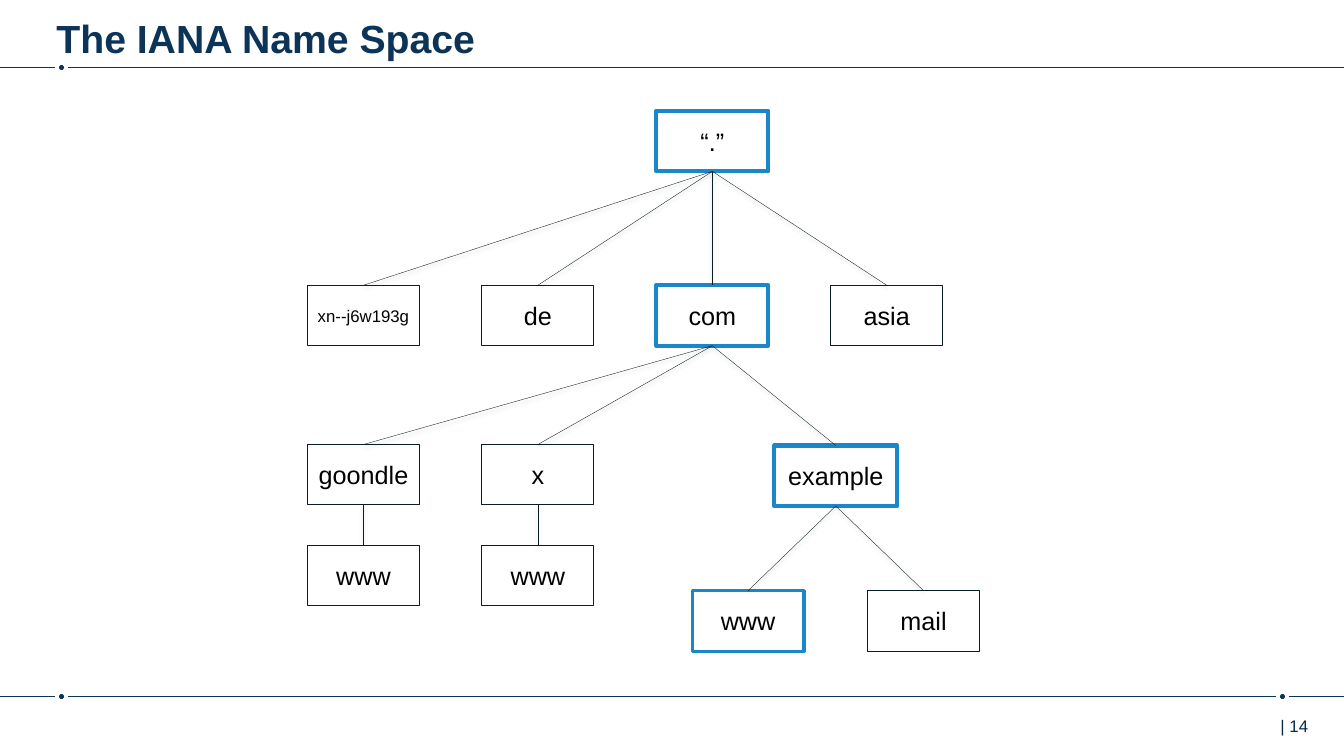
import pptx
import pptx.dml.color
import pptx.enum.shapes
import pptx.enum.text
import pptx.util
from dataclasses import dataclass
from lxml import etree
from pptx.oxml.ns import qn

Inches, Pt = pptx.util.Inches, pptx.util.Pt
RGBColor = pptx.dml.color.RGBColor
SHAPE = pptx.enum.shapes.MSO_SHAPE
STRAIGHT = pptx.enum.shapes.MSO_CONNECTOR.STRAIGHT
ALIGN, ANCHOR = pptx.enum.text.PP_ALIGN, pptx.enum.text.MSO_ANCHOR

NAVY = RGBColor(0x0C, 0x34, 0x58)
SLATE = RGBColor(0x00, 0x2B, 0x49)
INK = RGBColor(0x0A, 0x1F, 0x24)
BLUE = RGBColor(0x1A, 0x87, 0xC9)
BLACK = RGBColor(0, 0, 0)
FONT = "Arial"
WIDE, HIGH = 13.33, 7.5
NODE_W, NODE_H, STEP = 1.11, 0.6, 1.73
DOT, GAP = 0.05, 0.06


@dataclass
class Node:
    """A name in the tree: middle and top within the tree's box."""
    label: str
    mid: float
    top: float
    kids: tuple = ()
    path_line: float = 0
    size: int = 18
    width: float = NODE_W


def set_font(para, size, color, bold=False):
    """Format a whole paragraph."""
    font = para.font
    font.name, font.size, font.bold = FONT, Pt(size), bold
    font.color.rgb = color


def add_line(slide, start, end, color, width, shade=False):
    """Draw a straight line, with a soft shadow if asked."""
    line = slide.shapes.add_connector(STRAIGHT, *map(Inches, start + end))
    line.line.color.rgb = color
    line.line.width = Pt(width)
    props = line._element.spPr
    effects = etree.SubElement(props, qn("a:effectLst"))
    if shade:
        shadow = etree.SubElement(effects, qn("a:outerShdw"), blurRad="39370",
                                  dist="20320", dir="5400000", rotWithShape="0")
        tint = etree.SubElement(shadow, qn("a:srgbClr"), val="000000")
        etree.SubElement(tint, qn("a:alpha"), val="38000")
    return line


def add_rule(slide, y, dots):
    """Draw a full-width rule broken by a dot at each given place."""
    start = 0
    for x in dots:
        add_line(slide, (start, y), (x - GAP, y), NAVY, 1)
        dot = slide.shapes.add_shape(SHAPE.OVAL, Inches(x - DOT / 2),
                                     Inches(y - DOT / 2), Inches(DOT), Inches(DOT))
        dot.shadow.inherit = False
        dot.fill.solid()
        dot.fill.fore_color.rgb = NAVY
        dot.line.fill.background()
        start = x + GAP
    add_line(slide, (start, y), (WIDE, y), NAVY, 1)


def add_title(slide, left, top, width, height):
    """Place and format the title."""
    title = slide.shapes.title
    title.left, title.top = Inches(left), Inches(top)
    title.width, title.height = Inches(width), Inches(height)
    frame = title.text_frame
    frame.text = "The IANA Name Space"
    frame.auto_size = pptx.enum.text.MSO_AUTO_SIZE.NONE
    frame.vertical_anchor = ANCHOR.TOP
    frame.margin_top = Inches(0.09)
    para = frame.paragraphs[0]
    para.alignment = ALIGN.LEFT
    set_font(para, 28, NAVY, True)


def add_number(slide, left, top, width, height):
    """Place the page number."""
    box = slide.shapes.add_textbox(*map(Inches, (left, top, width, height)))
    frame = box.text_frame
    frame.word_wrap = True
    frame.margin_left, frame.margin_right = Inches(0.14), 0
    frame.text = "| 14"
    set_font(frame.paragraphs[0], 12, SLATE)


def add_tree(slide, node, left, top):
    """Draw a node and all names below it, and return its box."""
    x, y = left + node.mid, top + node.top
    box = slide.shapes.add_shape(SHAPE.RECTANGLE, Inches(x - node.width / 2),
                                 Inches(y), Inches(node.width), Inches(NODE_H))
    box.shadow.inherit = False
    box.fill.background()
    box.line.color.rgb = BLUE if node.path_line else INK
    box.line.width = Pt(node.path_line or 0.75)
    frame = box.text_frame
    frame.margin_left = frame.margin_right = Inches(0.05)
    frame.vertical_anchor = ANCHOR.MIDDLE
    frame.text = node.label
    para = frame.paragraphs[0]
    para.alignment = ALIGN.CENTER
    set_font(para, node.size, BLACK)
    for kid in node.kids:
        child = add_tree(slide, kid, left, top)
        link = add_line(slide, (x, y + NODE_H), (left + kid.mid, top + kid.top),
                        INK, 0.25, True)
        link.begin_connect(box, 2)
        link.end_connect(child, 0)
    return box


def make_names():
    """Lay out the name tree on four columns."""
    cols = [NODE_W / 2 + STEP * i for i in range(4)]
    fork, half = 5.24, 0.87
    example = Node("example", fork, 3.32, (
        Node("www", fork - half, 4.76, path_line=2.25),
        Node("mail", fork + half, 4.76)), 3, width=1.22)
    firms = tuple(Node(label, mid, 3.31, (Node("www", mid, 4.31),))
                  for label, mid in zip(("goondle", "x"), cols))
    return Node("“.”", cols[2], 0, (
        Node("xn--j6w193g", cols[0], STEP, size=12),
        Node("de", cols[1], STEP),
        Node("com", cols[2], STEP, firms + (example,), 3),
        Node("asia", cols[3], STEP)), 3)


def main():
    """Build the slide and save it."""
    deck = pptx.Presentation()
    deck.slide_width, deck.slide_height = Inches(WIDE), Inches(HIGH)
    slide = deck.slides.add_slide(deck.slide_layouts[5])
    add_rule(slide, 0.67, [0.61])
    add_rule(slide, 6.91, [0.61, 12.72])
    add_title(slide, 0.46, 0.05, 11.86, 0.49)
    add_number(slide, 12.56, 7.05, 0.77, 0.4)
    add_tree(slide, make_names(), 3.05, 1.1)
    deck.save("out.pptx")


if __name__ == "__main__":
    main()
